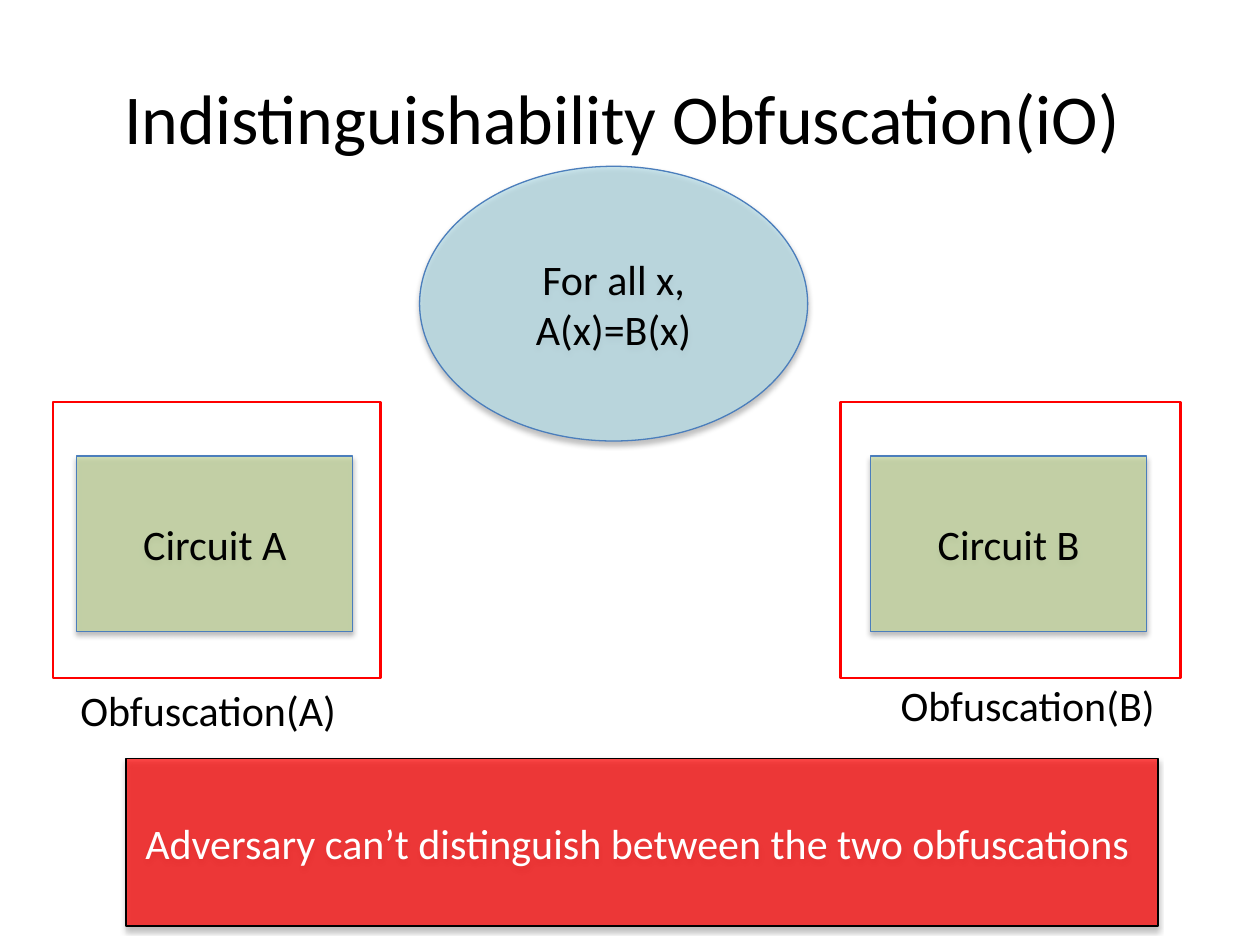
from lxml import etree
from pptx import Presentation
from pptx.dml.color import RGBColor
from pptx.enum.shapes import MSO_SHAPE
from pptx.enum.text import MSO_ANCHOR, PP_ALIGN
from pptx.oxml.ns import qn
from pptx.util import Inches, Pt

COLORS = {
    "black": "000000",
    "white": "FFFFFF",
    "red": "FF0000",
    "blue": "4B7EBC",
    "green": "C3D69B",
    "aqua": "B7DEE8",
}

prs = Presentation()
prs.slide_width, prs.slide_height = Inches(10), Inches(7.5)
col, row = prs.slide_width / 100, prs.slide_height / 75
s = prs.slides.add_slide(prs.slide_layouts[6])


def grid(x, y, w, h):
    return [int(v) for v in (x * col, y * row, w * col, h * row)]


def write(sp, lines, size=24, color="black", align=PP_ALIGN.CENTER, anchor=MSO_ANCHOR.MIDDLE):
    tf = sp.text_frame
    tf.word_wrap = True
    tf.vertical_anchor = anchor
    for i, line in enumerate(lines):
        p = tf.add_paragraph() if i else tf.paragraphs[0]
        p.alignment = align
        r = p.add_run()
        r.text = line
        r.font.color.rgb = RGBColor.from_string(COLORS[color])
        for name, value in {"name": "Calibri", "size": Pt(size)}.items():
            setattr(r.font, name, value)


title = s.shapes.add_textbox(*grid(5, 3, 90, 12.5))
write(title, ["Indistinguishability Obfuscation(iO) "], size=40)

RECT, OVAL = MSO_SHAPE.RECTANGLE, MSO_SHAPE.OVAL
blocks = [
    (RECT, (6.1, 36.2, 21.9, 13.9), "green", "blue", "black", ["Circuit A"]),
    (RECT, (69.1, 36.2, 21.9, 13.9), "green", "blue", "black", ["Circuit B"]),
    (RECT, (4.2, 31.9, 26, 21.9), None, "red", None, []),
    (RECT, (66.7, 31.9, 27, 21.9), None, "red", None, []),
    (RECT, (10, 60.2, 81.9, 13.3), "red", "black", "white",
     ["Adversary can’t distinguish between the two obfuscations "]),
    (OVAL, (33.3, 13.2, 30.8, 21.8), "aqua", "blue", "black", ["For all x,", "A(x)=B(x)"]),
]
for kind, cells, fill, line, ink, lines in blocks:
    sp = s.shapes.add_shape(kind, *grid(*cells))
    sp.shadow.inherit = False
    sp.line.color.rgb = RGBColor.from_string(COLORS[line])
    sp.line.width = Pt(0.75 if fill else 1.5)
    if not fill:
        sp.fill.background()
        continue
    sp.fill.solid()
    sp.fill.fore_color.rgb = RGBColor.from_string(COLORS[fill])
    spPr = sp.element.spPr
    tint = spPr.find(qn("a:solidFill")).find(qn("a:srgbClr"))
    etree.SubElement(tint, qn("a:alpha"), val="71000")
    shadow = etree.SubElement(
        spPr.find(qn("a:effectLst")), qn("a:outerShdw"),
        blurRad=str(Pt(3.1)), dist=str(Pt(1.8)), dir="5400000", rotWithShape="0",
    )
    shade = etree.SubElement(shadow, qn("a:srgbClr"), val=COLORS["black"])
    etree.SubElement(shade, qn("a:alpha"), val="35000")
    write(sp, lines, color=ink)

labels = [
    ("Obfuscation(A)", (5.4, 53.8, 22.9, 5)),
    ("Obfuscation(B)", (70.5, 53.4, 24.1, 5)),
]
for text, cells in labels:
    label = s.shapes.add_textbox(*grid(*cells))
    write(label, [text], align=PP_ALIGN.LEFT, anchor=MSO_ANCHOR.TOP)

prs.save("out.pptx")
